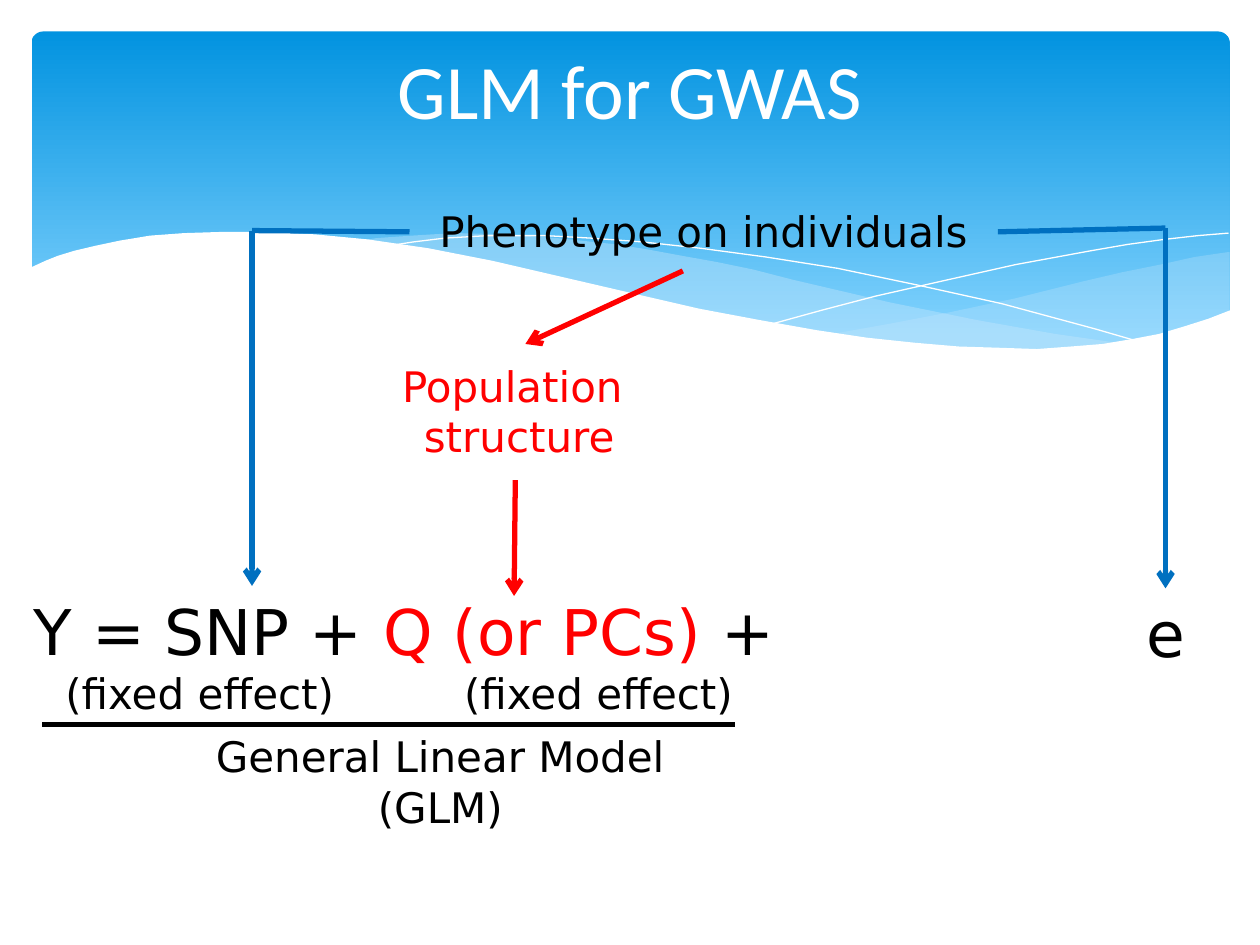
from lxml import etree
from pptx import Presentation
from pptx.dml.color import RGBColor
from pptx.enum.shapes import MSO_CONNECTOR, MSO_SHAPE
from pptx.enum.text import MSO_ANCHOR, MSO_AUTO_SIZE, PP_ALIGN
from pptx.oxml.ns import qn
from pptx.util import Pt

EMU_PER_PX = 9144
STRAIGHT = MSO_CONNECTOR.STRAIGHT
ROUNDED = MSO_SHAPE.ROUNDED_RECTANGLE
CENTER, LEFT = PP_ALIGN.CENTER, PP_ALIGN.LEFT
MIDDLE, TOP = MSO_ANCHOR.MIDDLE, MSO_ANCHOR.TOP
GROW, FIXED = MSO_AUTO_SIZE.SHAPE_TO_FIT_TEXT, MSO_AUTO_SIZE.NONE
TOP_SIDE, LEFT_SIDE, RIGHT_SIDE = 0, 1, 3
BLACK, WHITE, RED, BLUE, PALE = "000000", "FFFFFF", "FF0000", "0070C0", "C6E7FC"

RIGHT_SWELL = [
    (975, 200), (948, 204), (921, 210), (891, 216), (861, 223), (805, 237),
    (753, 248), (706, 257), (661, 265), (691, 269), (719, 272), (745, 275),
    (781, 277), (814, 278), (844, 277), (872, 274), (897, 270), (921, 265),
    (942, 259), (963, 252), (976, 247), (976, 200)]
LONG_SWELL = [
    (893, 273), (837, 265), (775, 254), (706, 240), (629, 222), (598, 214),
    (569, 208), (541, 203), (514, 198), (489, 194), (442, 189), (399, 186),
    (361, 185), (328, 187), (299, 189), (286, 191), (323, 196), (362, 203),
    (404, 211), (449, 222), (530, 240), (601, 255), (665, 266), (722, 274),
    (773, 277), (818, 278), (857, 277), (893, 273)]
FALLING_CREST = [
    (309, 195), (328, 192), (353, 189), (387, 187), (433, 187), (469, 189),
    (510, 192), (556, 197), (608, 204), (665, 213), (727, 226), (795, 241),
    (869, 261), (907, 272)]
RISING_CREST = [
    (613, 257), (653, 246), (695, 235), (748, 223), (806, 210), (866, 199),
    (895, 194), (924, 190), (951, 187), (975, 185)]
WHITE_WAVE = [
    (977, 246), (959, 253), (940, 259), (920, 265), (899, 269), (875, 273),
    (850, 275), (823, 277), (793, 276), (761, 275), (726, 272), (688, 268),
    (648, 262), (603, 254), (555, 245), (503, 233), (447, 220), (391, 207),
    (340, 197), (292, 190), (250, 186), (211, 184), (177, 184), (146, 185),
    (119, 187), (95, 191), (76, 195), (59, 199), (46, 203), (36, 207),
    (23, 213), (23, 329), (977, 329)]


def px(*lengths):
    return [length * EMU_PER_PX for length in lengths]


def rgb(color):
    return RGBColor.from_string(color)


def write(shape, paragraphs, size=24, font="DejaVu Sans", align=CENTER,
          anchor=TOP, autosize=GROW):
    frame = shape.text_frame
    frame.word_wrap = True
    frame.auto_size = autosize
    frame.vertical_anchor = anchor
    for index, runs in enumerate(paragraphs):
        paragraph = frame.add_paragraph() if index else frame.paragraphs[0]
        paragraph.alignment = align
        for words, color in runs:
            run = paragraph.add_run()
            run.text = words
            run.font.size = Pt(size)
            run.font.name = font
            run.font.color.rgb = rgb(color)


def label(slide, box, paragraphs, **text_format):
    textbox = slide.shapes.add_textbox(*px(*box))
    write(textbox, paragraphs, **text_format)
    return textbox


def banner(slide):
    sky = slide.shapes.add_shape(ROUNDED, *px(25, 25, 951, 270))
    sky.adjustments[0] = 0.034
    sky.shadow.inherit = False
    sky.line.fill.background()
    sky.fill.gradient()
    sky.fill.gradient_angle = 270
    stops = zip(sky.fill.gradient_stops, ("0293E0", "83D3FE"), (0, 0.9))
    for stop, color, position in stops:
        stop.color.rgb = rgb(color)
        stop.position = position


def outline(slide, points, closed):
    builder = slide.shapes.build_freeform(*points[0], scale=EMU_PER_PX)
    builder.add_line_segments(points[1:], close=closed)
    shape = builder.convert_to_shape()
    shape.shadow.inherit = False
    return shape


def wave(slide, points, color, opacity=100):
    area = outline(slide, points, True)
    area.line.fill.background()
    area.fill.solid()
    area.fill.fore_color.rgb = rgb(color)
    if opacity < 100:
        tint = area._element.spPr.find(".//" + qn("a:srgbClr"))
        etree.SubElement(tint, qn("a:alpha"), val=str(opacity * 1000))


def crest(slide, points):
    curve = outline(slide, points, False)
    curve.fill.background()
    curve.line.color.rgb = rgb(WHITE)
    curve.line.width = Pt(0)


def connect(slide, start, end, color, arrow=False):
    link = slide.shapes.add_connector(STRAIGHT, *px(*start, *end))
    link.line.color.rgb = rgb(color)
    link.line.width = Pt(3)
    if arrow:
        etree.SubElement(link.line._get_or_add_ln(), qn("a:tailEnd"), type="arrow")
    etree.SubElement(link._element.spPr, qn("a:effectLst"))
    return link


def heading(slide, words):
    title = slide.shapes.title
    title.left, title.top, title.width, title.height = px(50, 8, 900, 125)
    write(title, [[(words, WHITE)]], size=44, font="Calibri",
          anchor=MIDDLE, autosize=FIXED)
    slide.shapes._spTree.append(title._element)


def main():
    deck = Presentation()
    deck.slide_width, deck.slide_height = px(1000, 750)
    slide = deck.slides.add_slide(deck.slide_layouts[5])

    banner(slide)
    wave(slide, RIGHT_SWELL, PALE, 29)
    wave(slide, LONG_SWELL, PALE, 40)
    crest(slide, FALLING_CREST)
    crest(slide, RISING_CREST)
    wave(slide, WHITE_WAVE, WHITE)
    heading(slide, "GLM for GWAS")

    phenotype = label(slide, (325, 158, 467, 52),
                      [[("Phenotype on individuals", BLACK)]])
    label(slide, (308, 281, 208, 91),
          [[("Population ", RED)], [("structure", RED)]])
    label(slide, (17, 465, 800, 71),
          [[("Y = SNP + ", BLACK), ("Q (or PCs)", RED), (" +", BLACK)]],
          size=36, align=LEFT)
    for left, width in ((25, 267), (300, 350)):
        label(slide, (left, 525, width, 51), [[("(fixed effect)", BLACK)]])
    label(slide, (133, 575, 433, 40), [[("General Linear Model (GLM)", BLACK)]])
    error = label(slide, (875, 467, 100, 71), [[("e", BLACK)]], size=36)

    connect(slide, (583, 575), (33, 575), BLACK)
    connect(slide, (542, 215), (417, 273), RED, arrow=True)
    connect(slide, (409, 381), (408, 473), RED, arrow=True)
    connect(slide, (200, 183), (200, 465), BLUE, arrow=True)
    to_error = connect(slide, (925, 181), (925, 467), BLUE, arrow=True)
    to_error.end_connect(error, TOP_SIDE)
    for corner, edge, side in (((200, 183), (325, 184), LEFT_SIDE),
                               ((925, 181), (792, 184), RIGHT_SIDE)):
        branch = connect(slide, edge, corner, BLUE)
        branch.begin_connect(phenotype, side)

    deck.save("out.pptx")


if __name__ == "__main__":
    main()
